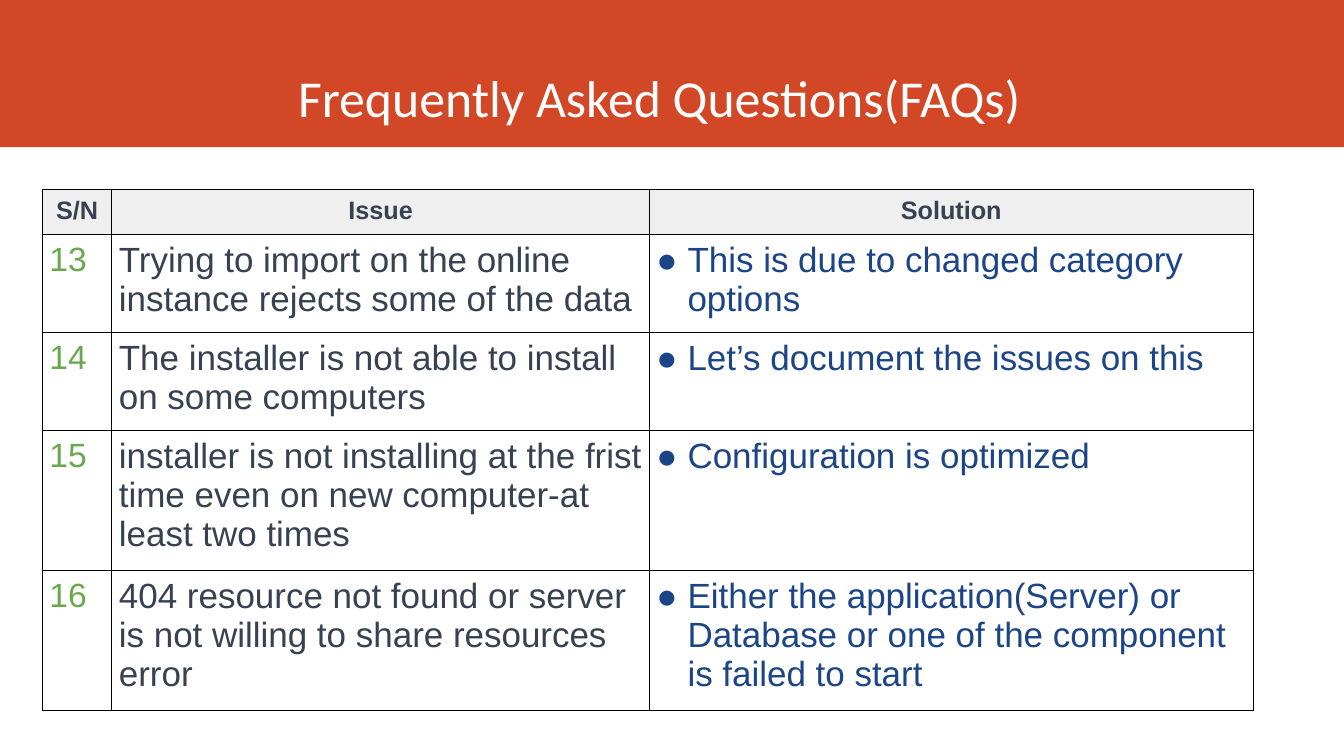
from lxml import etree
from pptx import Presentation
from pptx.dml.color import RGBColor
from pptx.enum.shapes import MSO_SHAPE
from pptx.enum.text import MSO_ANCHOR, PP_ALIGN
from pptx.oxml.ns import qn
from pptx.util import Inches, Pt

RECTANGLE = MSO_SHAPE.RECTANGLE
TOP, BOTTOM = MSO_ANCHOR.TOP, MSO_ANCHOR.BOTTOM
LEFT, CENTER = PP_ALIGN.LEFT, PP_ALIGN.CENTER

THEME = {
    "band": "D24726", "header_fill": "EFEFEF", "border": "000000", "bullet": "1C4587",
    "title": {"name": "Calibri", "size": 37, "bold": False, "color": "FFFFFF"},
    "header": {"name": "Arial", "size": 18, "bold": True, "color": "374151"},
    "number": {"name": "Arial", "size": 24, "bold": False, "color": "6AA84F"},
    "issue": {"name": "Arial", "size": 25, "bold": False, "color": "374151"},
    "solution": {"name": "Arial", "size": 25, "bold": False, "color": "1C4587"},
}
HEADINGS = ["S/N", "Issue", "Solution"]
# Number, issue, solution, lines of text in the row
FAQS = [
    ("13", "Trying to import on the online instance rejects some of the data",
     "This is due to changed category options", 2),
    ("14", "The installer is not able to install on some computers",
     "Let’s document the issues on this", 2),
    ("15", "installer is not installing at the frist time even on new computer-at least two times",
     "Configuration is optimized", 3),
    ("16", "404 resource not found or server is not willing to share resources error",
     "Either the application(Server) or Database or one of the component is failed to start", 3),
]
COLUMN_WIDTHS = [0.69, 5.33, 5.99]
HEADER_HEIGHT, LINE_HEIGHT, CELL_INSET = 0.42, 0.39, 0.07


def write(frame, text, style, align):
    paragraph = frame.paragraphs[0]
    paragraph.alignment = align
    run = paragraph.add_run()
    run.text = text
    formats = {**THEME[style], "size": Pt(THEME[style]["size"])}
    color = formats.pop("color")
    for attribute, value in formats.items():
        setattr(run.font, attribute, value)
    run.font.color.rgb = RGBColor.from_string(color)
    return paragraph


def outline(cell):
    properties = cell._tc.get_or_add_tcPr()
    for side in ("a:lnL", "a:lnR", "a:lnT", "a:lnB"):
        line = etree.SubElement(properties, qn(side), w=str(Pt(1)))
        fill = etree.SubElement(line, qn("a:solidFill"))
        etree.SubElement(fill, qn("a:srgbClr"), val=THEME["border"])


presentation = Presentation()
presentation.slide_width, presentation.slide_height = Inches(13.33), Inches(7.5)
W, H = presentation.slide_width, presentation.slide_height
slide = presentation.slides.add_slide(presentation.slide_layouts[6])

# Title band
band = slide.shapes.add_shape(RECTANGLE, 0, 0, W, Inches(1.46))
band.shadow.inherit = False
band.fill.solid()
band.fill.fore_color.rgb = RGBColor.from_string(THEME["band"])
band.line.fill.background()

# Title
title = slide.shapes.add_textbox(Inches(0.66), 0, Inches(11.76), Inches(1.32)).text_frame
title.word_wrap = True
title.vertical_anchor = BOTTOM
heading = write(title, "Frequently Asked Questions(FAQs)", "title", CENTER)
for attribute, value in {"line_spacing": 1.08, "space_after": Pt(8)}.items():
    setattr(heading, attribute, value)

# Table grid: each row is as tall as its lines of text
row_heights = [HEADER_HEIGHT] + [lines * LINE_HEIGHT + 2 * CELL_INSET for *_, lines in FAQS]
faq_table = slide.shapes.add_table(
    len(row_heights), len(COLUMN_WIDTHS), round(W * 0.0315), round(H * 0.251),
    Inches(sum(COLUMN_WIDTHS)), Inches(sum(row_heights))).table
faq_table.first_row = faq_table.horz_banding = False
for column, width in zip(faq_table.columns, COLUMN_WIDTHS):
    column.width = Inches(width)
for row, height in zip(faq_table.rows, row_heights):
    row.height = Inches(height)

# Questions and answers
cell_format = {"vertical_anchor": TOP}
for side in ("left", "right", "top", "bottom"):
    cell_format["margin_" + side] = Inches(CELL_INSET)
for row_index, texts in enumerate([HEADINGS] + [faq[:3] for faq in FAQS]):
    is_header = row_index == 0
    for column_index, (text, role) in enumerate(zip(texts, ("number", "issue", "solution"))):
        cell = faq_table.cell(row_index, column_index)
        for attribute, value in cell_format.items():
            setattr(cell, attribute, value)
        outline(cell)
        if is_header:
            cell.fill.solid()
            cell.fill.fore_color.rgb = RGBColor.from_string(THEME["header_fill"])
            write(cell.text_frame, text, "header", CENTER)
            continue
        cell.fill.background()
        answer = write(cell.text_frame, text, role, LEFT)
        if role == "solution":
            properties = answer._p.get_or_add_pPr()
            properties.set("marL", str(Inches(0.31)))
            properties.set("indent", str(-Inches(0.31)))
            bullet_color = etree.SubElement(properties, qn("a:buClr"))
            etree.SubElement(bullet_color, qn("a:srgbClr"), val=THEME["bullet"])
            etree.SubElement(properties, qn("a:buFont"), typeface="Arial")
            etree.SubElement(properties, qn("a:buChar"), char="●")

presentation.save("out.pptx")
